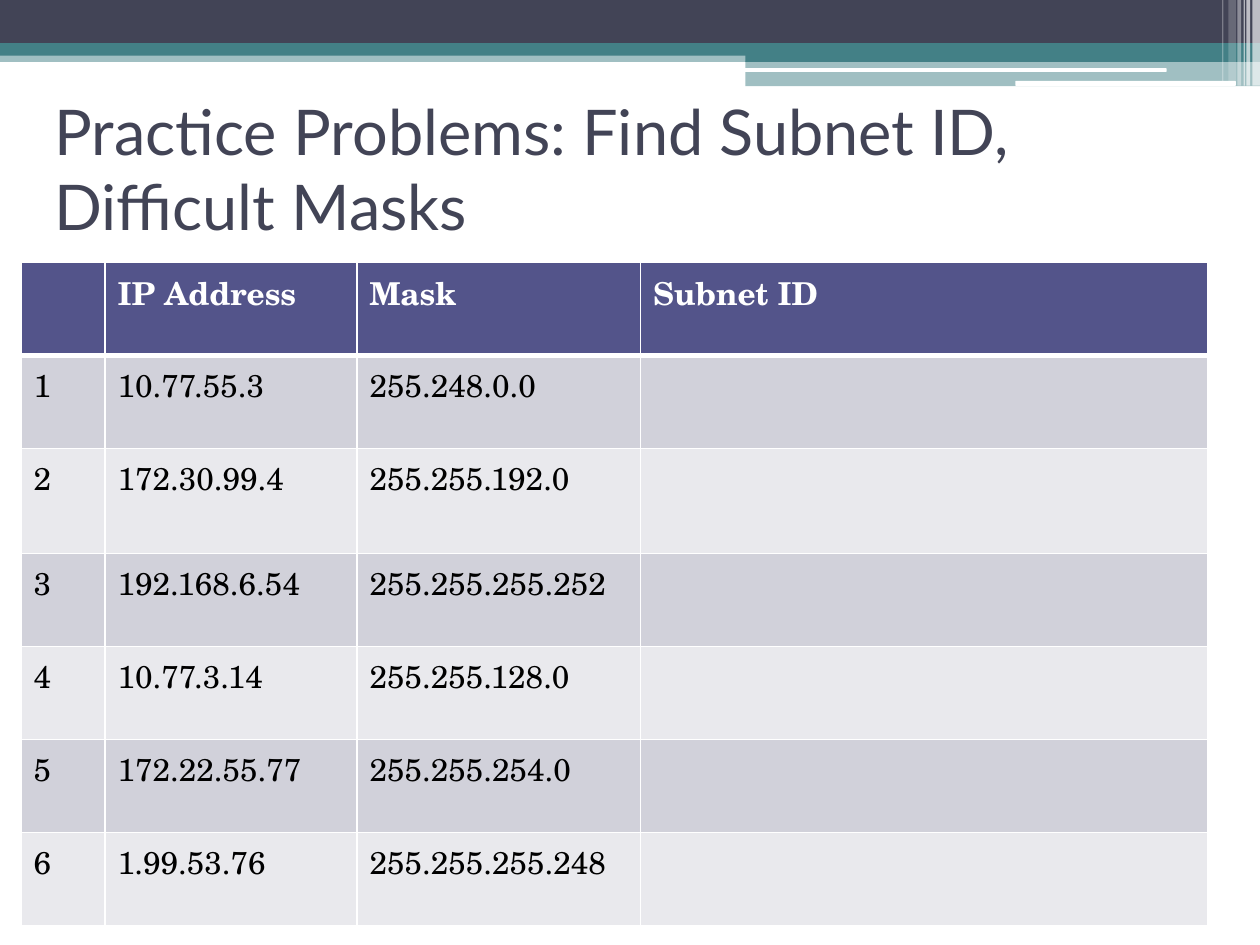
import pptx
import pptx.util
import pptx.dml.color
import pptx.enum.shapes
import pptx.enum.text
import pptx.oxml
import pptx.oxml.ns

RGB = pptx.dml.color.RGBColor
SHAPE = pptx.enum.shapes.MSO_SHAPE
SLATE = RGB(0x42, 0x44, 0x56)
TEAL = RGB(0x43, 0x80, 0x86)
WHITE = RGB(0xFF, 0xFF, 0xFF)
BLACK = RGB(0, 0, 0)
INDIGO = RGB(0x53, 0x54, 0x8A)
STRIPES = [RGB(0xD1, 0xD1, 0xDA), RGB(0xE9, 0xE9, 0xED)]

TITLE = {"name": "Lato", "size": pptx.util.Pt(36), "color": SLATE, "bold": False}
HEADER = {"name": "TeX Gyre Schola", "size": pptx.util.Pt(18), "color": WHITE, "bold": True}
BODY = {**HEADER, "color": BLACK, "bold": False}


class Deck:
    """Slide on a grid of 120 columns by 90 rows."""

    COLS, ROWS = 120, 90

    def __init__(self, prs):
        self.unit_x = prs.slide_width / self.COLS
        self.unit_y = prs.slide_height / self.ROWS
        self.s = prs.slides.add_slide(prs.slide_layouts[5])

    def box(self, x, y, w, h):
        return [round(n * u) for n, u in zip((x, y, w, h), (self.unit_x, self.unit_y) * 2)]

    def style(self, font, fmt):
        for key, value in fmt.items():
            if key == "color":
                font.color.rgb = value
            else:
                setattr(font, key, value)

    def title(self, text, *at):
        sp = self.s.shapes.title
        sp.left, sp.top, sp.width, sp.height = self.box(*at)
        tf = sp.text_frame
        tf.text = text
        tf.word_wrap = True
        tf.auto_size = pptx.enum.text.MSO_AUTO_SIZE.NONE
        tf.vertical_anchor = pptx.enum.text.MSO_ANCHOR.MIDDLE
        p = tf.paragraphs[0]
        p.alignment = pptx.enum.text.PP_ALIGN.LEFT
        self.style(p.runs[0].font, TITLE)

    def band(self, at, color, opacity=100, kind=SHAPE.RECTANGLE):
        sp = self.s.shapes.add_shape(kind, *self.box(*at))
        sp.shadow.inherit = False
        sp.line.fill.background()
        sp.fill.solid()
        sp.fill.fore_color.rgb = color
        if opacity < 100:
            clr = sp.fill._xPr.find(".//" + pptx.oxml.ns.qn("a:srgbClr"))
            clr.append(pptx.oxml.parse_xml(
                f'<a:alpha {pptx.oxml.ns.nsdecls("a")} val="{opacity * 1000}"/>'))

    def borders(self, cell, top, bottom):
        for side, width in {"L": 1, "R": 1, "T": top, "B": bottom}.items():
            cell._tc.get_or_add_tcPr().append(pptx.oxml.parse_xml(
                f'<a:ln{side} {pptx.oxml.ns.nsdecls("a")} w="{pptx.util.Pt(width)}">'
                f'<a:solidFill><a:srgbClr val="{WHITE}"/></a:solidFill></a:ln{side}>'))

    def table(self, x, y, widths, heights, data):
        at = self.box(x, y, sum(widths), sum(heights))
        table = self.s.shapes.add_table(len(heights), len(widths), *at).table
        table.horz_banding = False
        for column, width in zip(table.columns, widths):
            column.width = round(width * self.unit_x)
        for i, (row, height) in enumerate(zip(table.rows, heights)):
            row.height = round(height * self.unit_y)
            for cell, text in zip(row.cells, data[i]):
                # A heavier rule separates the header from the body
                self.borders(cell, 3 if i == 1 else 1, 3 if i == 0 else 1)
                cell.fill.solid()
                cell.fill.fore_color.rgb = STRIPES[(i - 1) % 2] if i else INDIGO
                p = cell.text_frame.paragraphs[0]
                p.text = text
                self.style(p.font, BODY if i else HEADER)
                for r in p.runs:
                    self.style(r.font, BODY if i else HEADER)


def main():
    prs = pptx.Presentation()
    prs.slide_width, prs.slide_height = pptx.util.Inches(10), pptx.util.Inches(7.5)
    deck = Deck(prs)

    # Header bands
    deck.band((0, 4.8, 120, 1.1), TEAL, 50)
    deck.band((0, 0, 120, 4.1), SLATE)
    deck.band((0, 4.1, 120, 1.2), TEAL)
    deck.band((71, 4.7, 49, 1.2), TEAL)
    deck.band((71, 5.8, 49, 2.4), TEAL, 50)
    for at in [(70.9, 6.5, 40.2, 0.36), (96.7, 7.7, 21, 0.48)]:
        deck.band(at, WHITE, kind=SHAPE.ROUNDED_RECTANGLE)

    # Translucent stripes in the corner: left, width, height, opacity
    for x, w, h, opacity in [(119.28, 0.72, 8.16, 65), (118.7, 0.36, 8.16, 65),
                             (118.44, 0.12, 8.16, 60), (117.84, 0.36, 8.16, 40),
                             (117, 0.72, 7.7, 20), (116.4, 0.12, 7.7, 30)]:
        deck.band((x, 0, w, h), WHITE, opacity)

    # Title
    deck.title("Practice Problems: Find Subnet ID, Difficult Masks", 4, 9, 108, 14)

    # Practice table, with the answers left open
    problems = [("10.77.55.3", "255.248.0.0"), ("172.30.99.4", "255.255.192.0"),
                ("192.168.6.54", "255.255.255.252"), ("10.77.3.14", "255.255.128.0"),
                ("172.22.55.77", "255.255.254.0"), ("1.99.53.76", "255.255.255.248")]
    data = [("", "IP Address", "Mask", "Subnet ID")]
    data += [(str(n), ip, mask, "") for n, (ip, mask) in enumerate(problems, 1)]
    heights = [8.86] * len(data)
    heights[2] = 10
    deck.table(2, 25, [8, 24, 27, 54], heights, data)

    prs.save("out.pptx")


if __name__ == "__main__":
    main()
